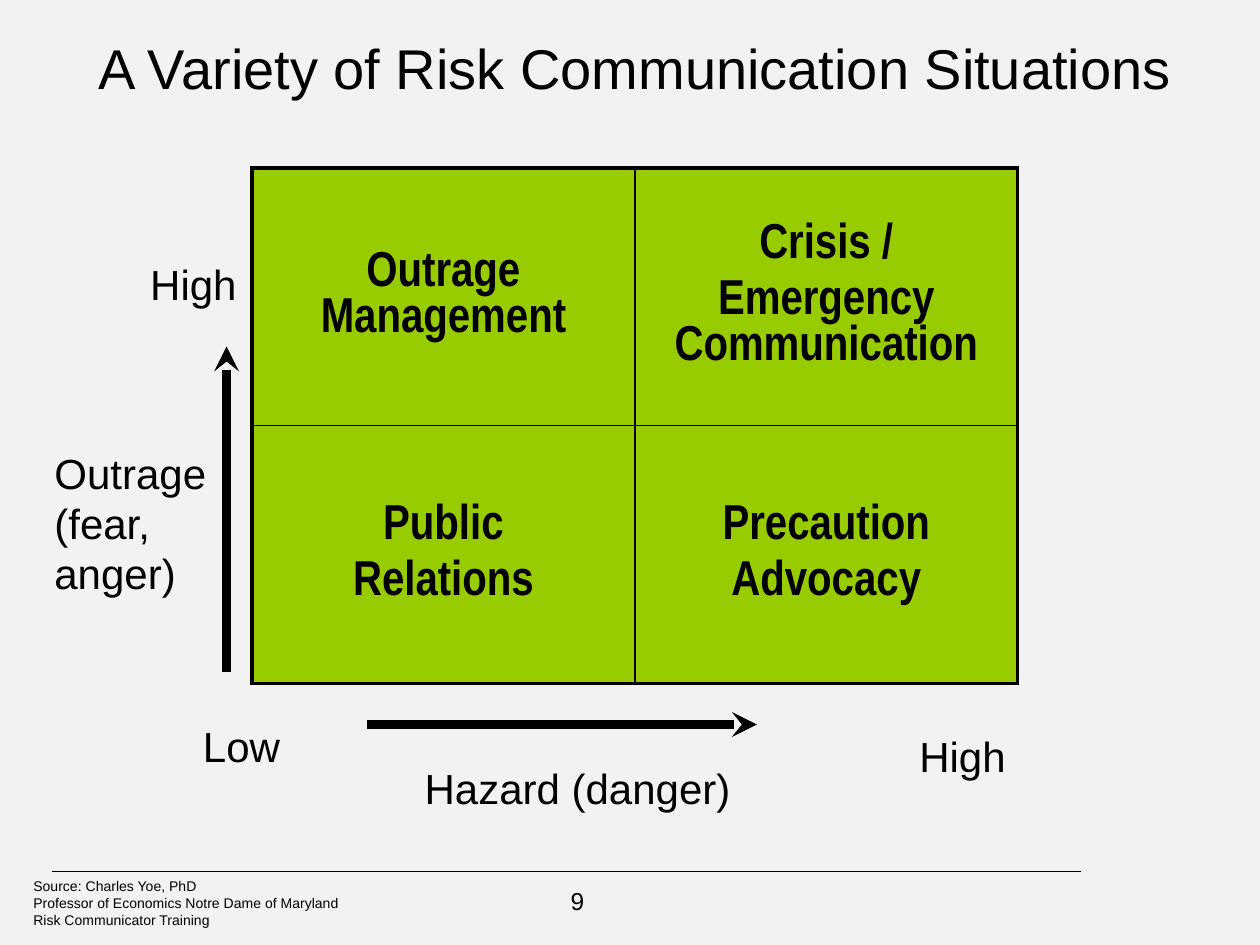
from lxml.etree import SubElement as Sub
from pptx import Presentation
from pptx.dml.color import RGBColor as Rgb
from pptx.enum.shapes import MSO_CONNECTOR as Conn
from pptx.enum.text import MSO_ANCHOR as Anchor, PP_ALIGN as Align
from pptx.oxml.ns import qn
from pptx.util import Pt

COLORS = {"back": "F2F2F2", "ink": "000000", "cell": "99CC00"}


class Deck:
    """Holds the style and the current slide; all lengths are in points."""

    def __init__(self):
        self.prs = Presentation()
        self.prs.slide_width, self.prs.slide_height = Pt(720), Pt(540)
        self.slide = self.prs.slides.add_slide(self.prs.slide_layouts[6])
        self.paint(self.slide.background.fill, "back")

    def paint(self, fill, name):
        fill.solid()
        fill.fore_color.rgb = Rgb.from_string(COLORS[name])

    def set_text(self, frame, lines, size, align, face="Arial", bold=False,
                 gap=0):
        for i, line in enumerate(lines):
            para = frame.add_paragraph() if i else frame.paragraphs[0]
            para.text = line
            para.alignment = align
            if i and gap:
                para.space_before = Pt(gap)
            font = para.font
            font.name, font.size, font.bold = face, Pt(size), bold
            font.color.rgb = Rgb.from_string(COLORS["ink"])

    def text(self, box, lines, size=24, align=Align.CENTER, wrap=True,
             anchor=Anchor.TOP):
        frame = self.slide.shapes.add_textbox(*map(Pt, box)).text_frame
        frame.word_wrap, frame.vertical_anchor = wrap, anchor
        self.set_text(frame, lines, size, align)

    def line(self, start, end, width, arrow=False):
        link = self.slide.shapes.add_connector(
            Conn.STRAIGHT, *map(Pt, start + end))
        link.line.width = Pt(width)
        link.line.color.rgb = Rgb.from_string(COLORS["ink"])
        spot = link._element.spPr
        if arrow:
            Sub(spot.find(qn("a:ln")), qn("a:tailEnd"), type="stealth")
        Sub(spot, qn("a:effectLst"))

    def edge(self, cell, side, width):
        line = Sub(cell._tc.get_or_add_tcPr(), qn("a:ln" + side),
                   w=str(Pt(width)))
        fill = Sub(line, qn("a:solidFill"))
        Sub(fill, qn("a:srgbClr"), val=COLORS["ink"])

    def grid(self, box, rows):
        """Draw a table with a thick frame and thin inner lines."""
        high, wide = len(rows), len(rows[0])
        table = self.slide.shapes.add_table(high, wide, *map(Pt, box)).table
        table.first_row = table.horz_banding = False
        for r, row in enumerate(rows):
            for c, lines in enumerate(row):
                cell = table.cell(r, c)
                outer = {"L": c == 0, "R": c == wide - 1,
                         "T": r == 0, "B": r == high - 1}
                for side, thick in outer.items():
                    self.edge(cell, side, 2.25 if thick else 1)
                self.paint(cell.fill, "cell")
                cell.vertical_anchor = Anchor.MIDDLE
                self.set_text(cell.text_frame, lines, 28, Align.CENTER,
                              "Arial Narrow", True, 5.6)


def main():
    deck = Deck()
    deck.line((618, 498), (30, 498), 0.75)
    deck.text((246, 502.5, 168, 37.5), ["9"], 14)
    deck.text((24, 12, 678, 53),
              ["A Variety of Risk Communication Situations"], 32,
              anchor=Anchor.MIDDLE)

    deck.text((234, 432, 192, 36), ["Hazard (danger)"], wrap=False)
    deck.text((78, 144, 65, 36), ["High"], wrap=False)
    deck.text((102, 408, 72, 36), ["Low"])
    deck.text((517.5, 414, 65, 36), ["High"], wrap=False)
    deck.line((210, 414), (432.5, 414), 4.75, arrow=True)
    deck.line((129.5, 384), (129.5, 198), 4.75, arrow=True)

    deck.grid((144, 96, 437.5, 294.5), [
        [["Outrage Management"], ["Crisis /", "Emergency Communication"]],
        [["Public", "Relations"], ["Precaution", "Advocacy"]],
    ])

    deck.text((24, 252, 104.5, 94.5), ["Outrage", "(fear, anger)"],
              align=Align.LEFT)
    deck.text((12, 498, 252, 46),
              ["Source: Charles Yoe, PhD",
               "Professor of Economics Notre Dame of Maryland",
               "Risk Communicator Training"], 8, Align.LEFT)
    deck.prs.save("out.pptx")


if __name__ == "__main__":
    main()
